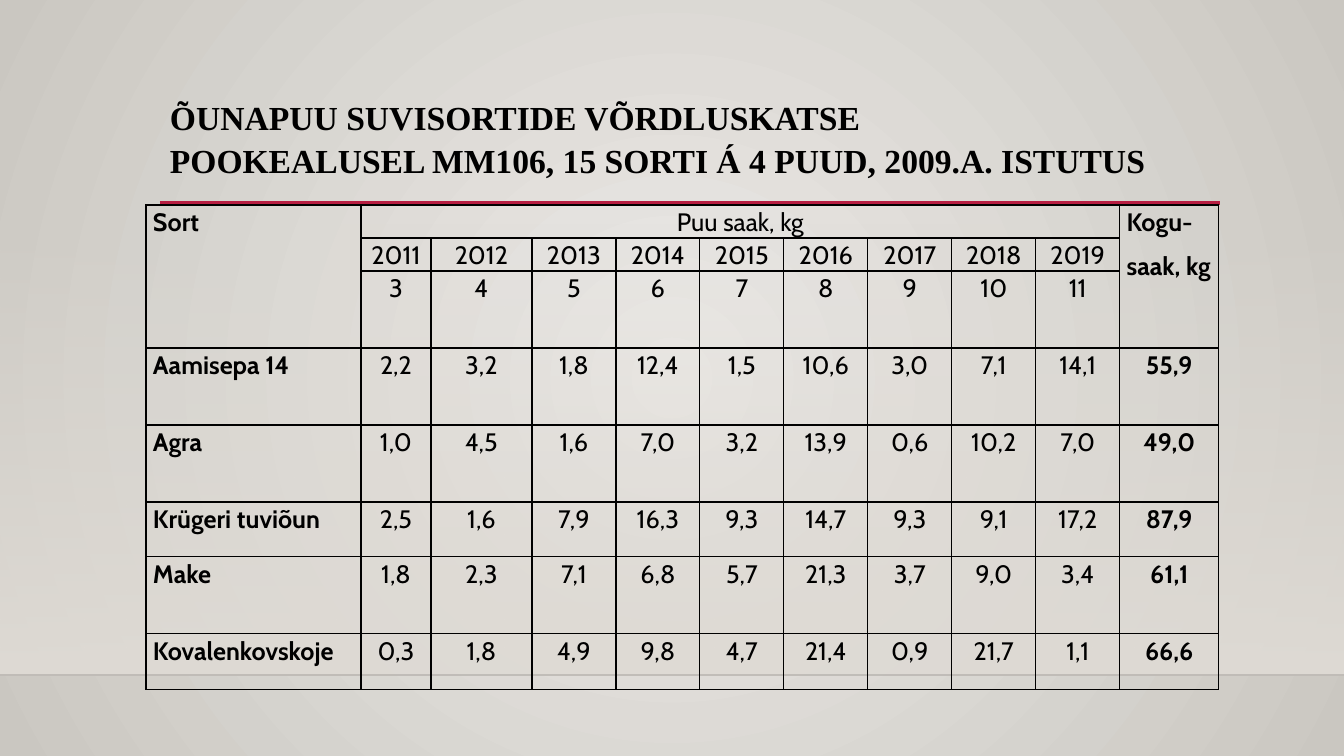
"""Builds the slide on the yields of summer apple varieties."""
import pptx
import pptx.dml.color
import pptx.enum.shapes
import pptx.enum.text
import pptx.oxml
import pptx.oxml.ns
import pptx.util

TITLE = "ÕUNAPUU SUVISORTIDE VÕRDLUSKATSE\vPOOKEALUSEL MM106, 15 SORTI Á 4 PUUD, 2009.A. ISTUTUS"
YEARS = range(2011, 2020)
AGES = range(3, 12)
YIELDS = [
    ("Aamisepa 14", "2,2 3,2 1,8 12,4 1,5 10,6 3,0 7,1 14,1", "55,9"),
    ("Agra", "1,0 4,5 1,6 7,0 3,2 13,9 0,6 10,2 7,0", "49,0"),
    ("Krügeri tuviõun", "2,5 1,6 7,9 16,3 9,3 14,7 9,3 9,1 17,2", "87,9"),
    ("Make", "1,8 2,3 7,1 6,8 5,7 21,3 3,7 9,0 3,4", "61,1"),
    ("Kovalenkovskoje", "0,3 1,8 4,9 9,8 4,7 21,4 0,9 21,7 1,1", "66,6"),
]
COLS = [215, 70, 101] + [84] * 7 + [99]
ROWS = [33, 33, 77, 77, 77, 55, 77, 56]
LEFT, TOP = 146, 205
WIDE, HIGH = 1344, 756

RGB = pptx.dml.color.RGBColor
BLACK = RGB(0, 0, 0)
RED = RGB(0xB7, 0x1E, 0x42)
LIGHT = RGB(0xEC, 0xEA, 0xE7)
DARK = RGB(0xCA, 0xC7, 0xC1)
SAND = RGB(0xDF, 0xDB, 0xD5)
ALIGN = pptx.enum.text.PP_ALIGN
qn = pptx.oxml.ns.qn
NS = pptx.oxml.ns.nsdecls("a")


def px(num):
    return round(num * 914400 / 100.8)


def node(xml):
    return pptx.oxml.parse_xml(xml.replace(">", f" {NS}>", 1) if "/>" not in xml.split(">")[0] + ">"
                               else xml.replace("/>", f" {NS}/>", 1))


def blend(fill, *tones):
    fill.gradient()
    for stop, tone in zip(fill.gradient_stops, tones):
        stop.color.rgb = tone


def write(frame, text, font="Cabin", size=18, bold=False, align=ALIGN.CENTER):
    frame.text = text
    for para in frame.paragraphs:
        para.alignment = align
        para.line_spacing = 1.07
        para.space_after = pptx.util.Pt(8)
        for run in para.runs:
            run.font.name = font
            run.font.size = pptx.util.Pt(size)
            run.font.bold = bold
            run.font.color.rgb = BLACK


def rule(slide, left, right, y, tone, width):
    line = slide.shapes.add_connector(
        pptx.enum.shapes.MSO_CONNECTOR.STRAIGHT, px(left), px(y), px(right), px(y))
    line.line.color.rgb = tone
    line.line.width = pptx.util.Pt(width)
    line.element.spPr.append(node("<a:effectLst/>"))
    return line


def backdrop(slide):
    blend(slide.background.fill, LIGHT, DARK)
    lin = next(slide.element.iter(qn("a:lin")))
    lin.getparent().replace(lin, node(
        '<a:path path="circle"><a:fillToRect l="50000" t="50000" r="50000" b="50000"/></a:path>'))
    wall = slide.shapes.add_shape(
        pptx.enum.shapes.MSO_SHAPE.RECTANGLE, 0, px(223), px(WIDE), px(453))
    wall.shadow.inherit = False
    wall.line.fill.background()
    blend(wall.fill, SAND, SAND)
    wall.fill.gradient_angle = 270
    next(wall.element.iter(qn("a:srgbClr"))).append(node('<a:alpha val="0"/>'))
    floor = rule(slide, 0, WIDE, 675, BLACK, 1)
    next(floor.element.iter(qn("a:srgbClr"))).append(node('<a:alpha val="20000"/>'))
    rule(slide, 160, 1220, 203, RED, 2.5)


def heading(slide):
    frame = slide.shapes.add_textbox(px(160), px(89), px(1058), px(116)).text_frame
    frame.word_wrap = True
    write(frame, TITLE, font="Times New Roman", size=24, bold=True, align=ALIGN.LEFT)


def style(cell):
    cell.margin_left = cell.margin_right = px(7)
    cell.margin_top = cell.margin_bottom = 0
    props = cell._tc.get_or_add_tcPr()
    for side in "LRTB":
        props.append(node(f'<a:ln{side} w="12700"><a:solidFill><a:srgbClr val="{BLACK}"/>'
                          f'</a:solidFill></a:ln{side}>'))
    cell.fill.background()


def grid(slide):
    table = slide.shapes.add_table(
        len(ROWS), len(COLS), px(LEFT), px(TOP), px(sum(COLS)), px(sum(ROWS))).table
    table.first_row = table.horz_banding = False
    for col, width in zip(table.columns, COLS):
        col.width = px(width)
    for row, height in zip(table.rows, ROWS):
        row.height = px(height)
    for cell in table.iter_cells():
        style(cell)
    last = len(COLS) - 1
    table.cell(0, 0).merge(table.cell(2, 0))
    table.cell(0, 1).merge(table.cell(0, last - 1))
    table.cell(0, last).merge(table.cell(2, last))
    write(table.cell(0, 0).text_frame, "Sort", bold=True, align=ALIGN.JUSTIFY)
    write(table.cell(0, 1).text_frame, "Puu saak, kg")
    write(table.cell(0, last).text_frame, "Kogu-\nsaak, kg", bold=True, align=ALIGN.JUSTIFY)
    lines = [YEARS, AGES] + [crop.split() for _, crop, _ in YIELDS]
    for r, line in enumerate(lines, 1):
        for c, value in enumerate(line, 1):
            write(table.cell(r, c).text_frame, str(value))
    for r, (name, _, total) in enumerate(YIELDS, 3):
        write(table.cell(r, 0).text_frame, name, bold=True, align=ALIGN.JUSTIFY)
        write(table.cell(r, last).text_frame, total, bold=True)


def main():
    deck = pptx.Presentation()
    deck.slide_width, deck.slide_height = px(WIDE), px(HIGH)
    slide = deck.slides.add_slide(deck.slide_layouts[6])
    backdrop(slide)
    heading(slide)
    grid(slide)
    deck.save("out.pptx")


if __name__ == "__main__":
    main()
